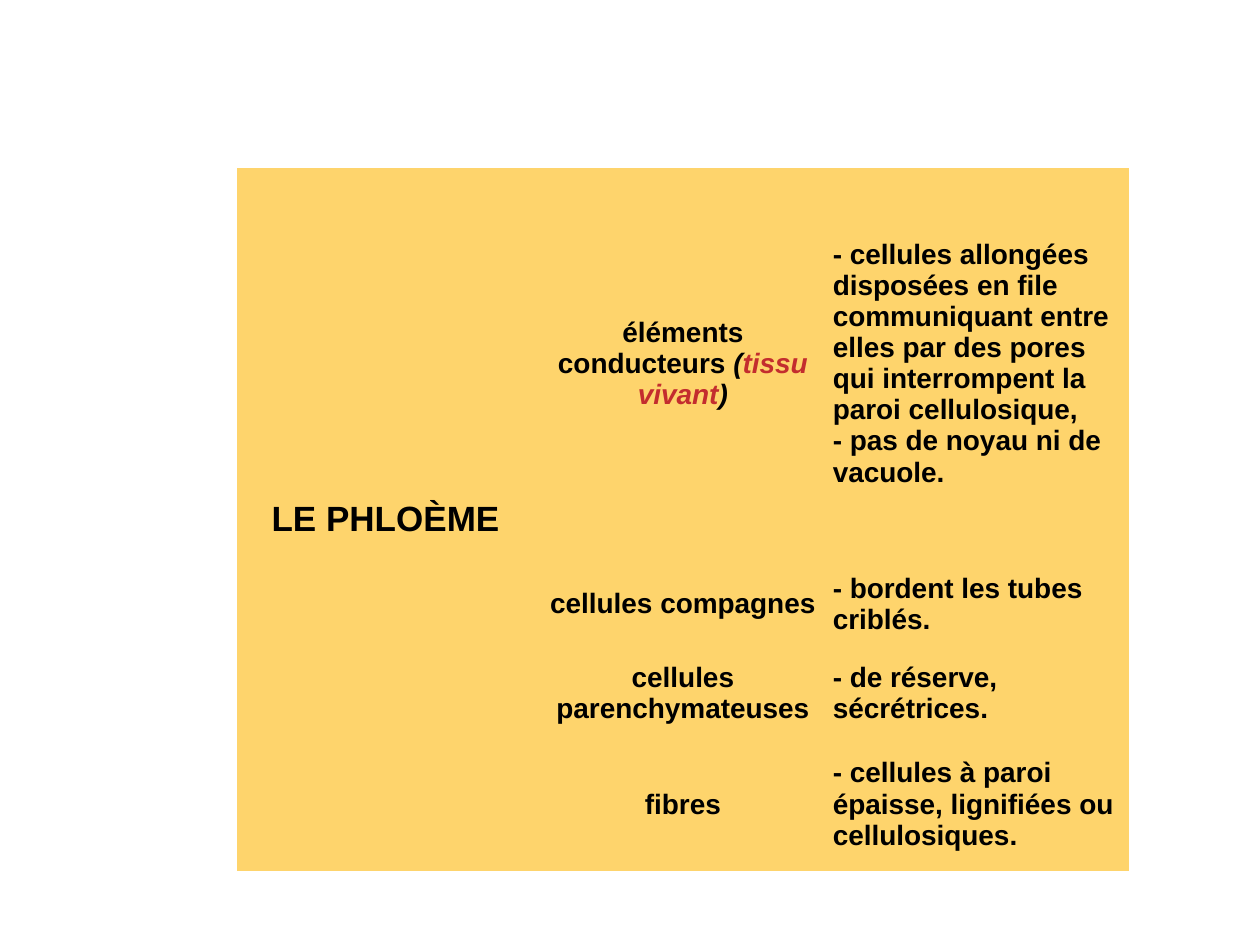
from typing import NamedTuple

from lxml.etree import SubElement
from pptx import Presentation
from pptx.dml.color import RGBColor
from pptx.enum.text import MSO_ANCHOR, PP_ALIGN
from pptx.oxml.ns import qn
from pptx.table import _Cell
from pptx.util import Inches, Pt

GOLD = RGBColor(0xFE, 0xD4, 0x6C)
BLACK = RGBColor(0, 0, 0)
RED = RGBColor(0xC3, 0x2D, 0x2E)
PLAIN_STYLE = "{2D5ABB26-0587-4C30-8999-92F81FD0307C}"
WIDTH = 2.36


class Span(NamedTuple):
    text: str
    color: RGBColor = BLACK
    slant: bool = False


class Tissue(NamedTuple):
    height: float
    name: list[Span]
    traits: list[str]


TISSUES = [
    Tissue(
        3.11,
        [
            Span("éléments conducteurs "),
            Span("(", slant=True),
            Span("tissu vivant", RED, True),
            Span(")", slant=True),
        ],
        [
            "- cellules allongées disposées en file communiquant entre elles "
            "par des pores qui interrompent la paroi cellulosique,",
            "- pas de noyau ni de vacuole.",
        ],
    ),
    Tissue(0.71, [Span("cellules compagnes")], ["- bordent les tubes criblés."]),
    Tissue(0.71, [Span("cellules parenchymateuses")], ["- de réserve, sécrétrices."]),
    Tissue(
        1.05,
        [Span("fibres")],
        ["- cellules à paroi épaisse, lignifiées ou cellulosiques."],
    ),
]


def style_cell(cell: _Cell) -> None:
    props = cell._tc.get_or_add_tcPr()
    for edge in ("a:lnL", "a:lnR", "a:lnT", "a:lnB"):
        SubElement(SubElement(props, qn(edge), w="0"), qn("a:noFill"))
    cell.fill.solid()
    cell.fill.fore_color.rgb = GOLD
    cell.vertical_anchor = MSO_ANCHOR.MIDDLE
    cell.margin_left = cell.margin_right = Inches(0.01)
    cell.margin_top = cell.margin_bottom = Inches(0.01)


def write_cell(
    cell: _Cell, lines: list[list[Span]], align: PP_ALIGN, size: int = 16
) -> None:
    frame = cell.text_frame
    for index, spans in enumerate(lines):
        para = frame.add_paragraph() if index else frame.paragraphs[0]
        para.alignment = align
        para.font.name = "Arial"
        para.font.size = Pt(size)
        para.font.bold = True
        for span in spans:
            run = para.add_run()
            run.text = span.text
            run.font.name = "Arial"
            run.font.size = Pt(size)
            run.font.bold = True
            run.font.italic = span.slant
            run.font.color.rgb = span.color


def main() -> None:
    deck = Presentation()
    deck.slide_width, deck.slide_height = Inches(10), Inches(7.5)
    slide = deck.slides.add_slide(deck.slide_layouts[6])
    total = sum(tissue.height for tissue in TISSUES)
    frame = slide.shapes.add_table(
        len(TISSUES), 3, Inches(1.88), Inches(1.33), Inches(3 * WIDTH), Inches(total)
    )
    table = frame.table
    table.first_row = table.horz_banding = False
    table._tbl.tblPr.find(qn("a:tableStyleId")).text = PLAIN_STYLE
    for column in table.columns:
        column.width = Inches(WIDTH)
    for cell in table.iter_cells():
        style_cell(cell)
    table.cell(0, 0).merge(table.cell(len(TISSUES) - 1, 0))
    write_cell(table.cell(0, 0), [[Span("LE PHLOÈME")]], PP_ALIGN.CENTER, 20)
    for row, tissue in enumerate(TISSUES):
        table.rows[row].height = Inches(tissue.height)
        write_cell(table.cell(row, 1), [tissue.name], PP_ALIGN.CENTER)
        traits = [[Span(trait)] for trait in tissue.traits]
        write_cell(table.cell(row, 2), traits, PP_ALIGN.LEFT)
    deck.save("out.pptx")


if __name__ == "__main__":
    main()
